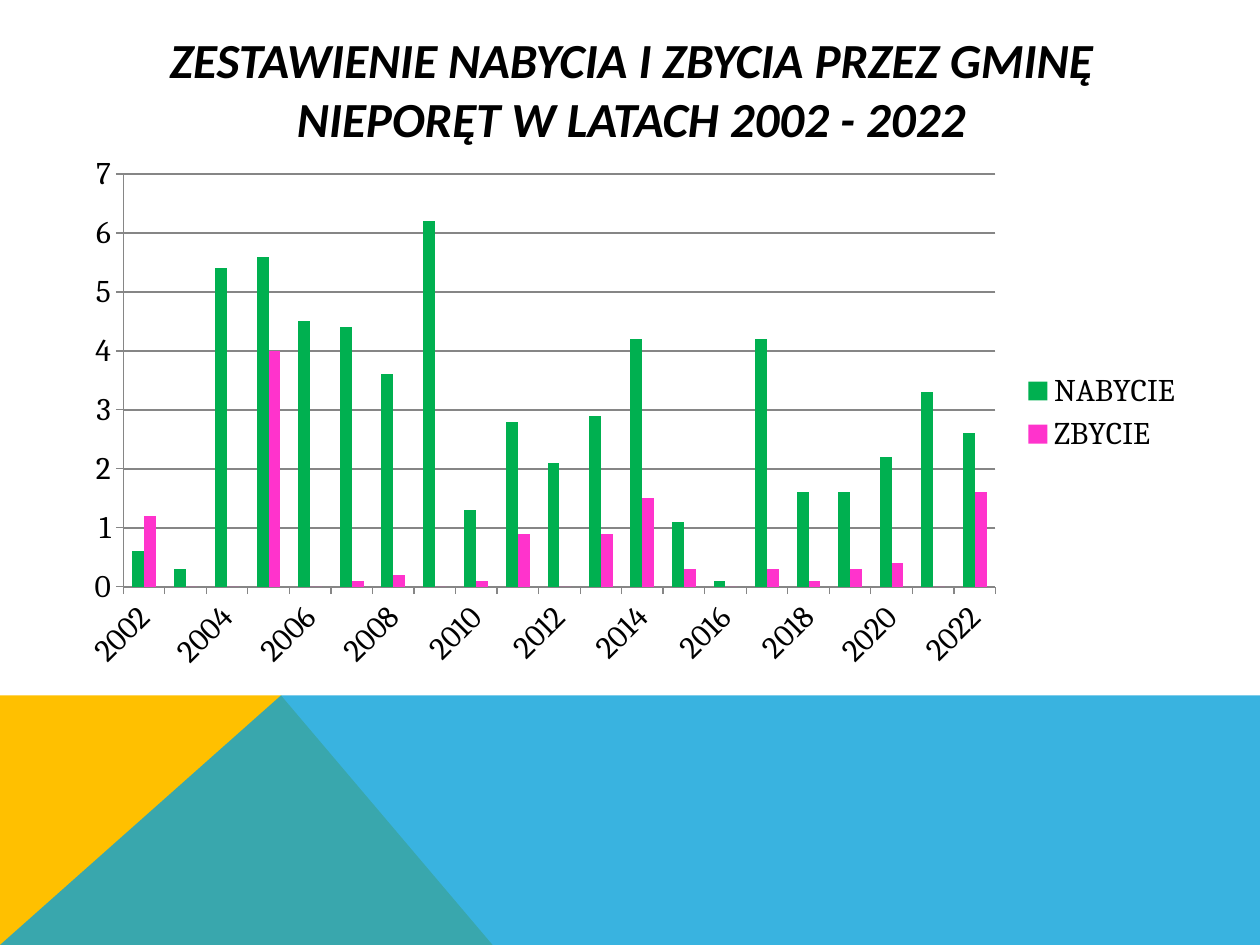
from dataclasses import dataclass

from lxml import etree
from pptx import Presentation
from pptx import util as u
from pptx.chart import data as chart_data
from pptx.dml import color as dml
from pptx.enum import chart as charts, text
from pptx.oxml import ns

Pt = u.Pt


@dataclass(frozen=True)
class Theme:
    """Colours, fonts and type sizes of the slide."""
    ink: str = "000000"
    grid: str = "868686"
    gold: str = "FFC000"
    blue: str = "08A1D9"
    bought: str = "00B050"
    sold: str = "FF33CC"
    title_font: str = "Calibri"
    chart_font: str = "Cambria"
    title_size: int = 28
    chart_size: int = 18


THEME = Theme()
WIDTH, HEIGHT = 720, 540
BAND_TOP, PEAK = 397.4, 160.6
TITLE = "ZESTAWIENIE NABYCIA I ZBYCIA PRZEZ GMINĘ NIEPORĘT W LATACH 2002 - 2022"
YEARS = [str(year) for year in range(2002, 2023)]
SERIES = [
    ("NABYCIE", THEME.bought,
     [0.6, 0.3, 5.4, 5.6, 4.5, 4.4, 3.6, 6.2, 1.3, 2.8, 2.1,
      2.9, 4.2, 1.1, 0.1, 4.2, 1.6, 1.6, 2.2, 3.3, 2.6]),
    ("ZBYCIE", THEME.sold,
     [1.2, 0, 0, 4, 0, 0.1, 0.2, 0, 0.1, 0.9, 0,
      0.9, 1.5, 0.3, 0, 0.3, 0.1, 0.3, 0.4, 0, 1.6]),
]


def paint(fill, colour):
    """Give a fill one solid colour."""
    fill.solid()
    fill.fore_color.rgb = dml.RGBColor.from_string(colour)


def style_font(font, name, size, bold=False, italic=False):
    """Set face, size, weight and ink colour of a font."""
    font.name, font.size = name, Pt(size)
    font.bold, font.italic = bold, italic
    font.color.rgb = dml.RGBColor.from_string(THEME.ink)


def add_polygon(slide, points, colour, opacity=100):
    """Draw a closed, borderless polygon through points."""
    start, *others = [(Pt(x), Pt(y)) for x, y in points]
    builder = slide.shapes.build_freeform(*start)
    builder.add_line_segments(others, close=True)
    shape = builder.convert_to_shape()
    shape.shadow.inherit = False
    paint(shape.fill, colour)
    shape.line.fill.background()
    if opacity < 100:
        solid = shape.fill._xPr.find(ns.qn("a:solidFill"))
        etree.SubElement(solid[0], ns.qn("a:alpha"), val=str(opacity * 1000))


def add_title(slide, wording, left, top, width, height):
    """Add the centred bold italic heading."""
    box = slide.shapes.add_textbox(Pt(left), Pt(top), Pt(width), Pt(height))
    frame = box.text_frame
    frame.word_wrap = True
    frame.vertical_anchor = text.MSO_ANCHOR.MIDDLE
    frame.text = wording
    paragraph = frame.paragraphs[0]
    paragraph.alignment = text.PP_ALIGN.CENTER
    style_font(paragraph.runs[0].font, THEME.title_font, THEME.title_size, True, True)


def style_line(line, width):
    """Give a chart line the grid colour and a width."""
    line.color.rgb = dml.RGBColor.from_string(THEME.grid)
    line.width = Pt(width)


def style_axes(chart):
    """Format both axes, the gridlines and the slanted years."""
    for axis in (chart.category_axis, chart.value_axis):
        axis.major_tick_mark = charts.XL_TICK_MARK.OUTSIDE
        axis.minor_tick_mark = charts.XL_TICK_MARK.NONE
        style_line(axis.format.line, 0.75)
        style_font(axis.tick_labels.font, THEME.chart_font, THEME.chart_size)
    values = chart.value_axis
    values.minimum_scale, values.maximum_scale, values.major_unit = 0, 7, 1
    values.tick_labels.number_format = "0"
    values.tick_labels.number_format_is_linked = False
    values.has_major_gridlines = True
    style_line(values.major_gridlines.format.line, 1)
    body = chart.category_axis._element.find(".//" + ns.qn("a:bodyPr"))
    body.set("rot", "-2700000")


def add_column_chart(slide, left, top, width, height):
    """Add the clustered columns with a legend on the right."""
    content = chart_data.CategoryChartData()
    content.categories = YEARS
    for name, _, values in SERIES:
        content.add_series(name, values)
    chart = slide.shapes.add_chart(
        charts.XL_CHART_TYPE.COLUMN_CLUSTERED,
        Pt(left), Pt(top), Pt(width), Pt(height), content).chart
    chart.has_title = False
    style_font(chart.font, THEME.chart_font, THEME.chart_size)
    chart.has_legend = True
    chart.legend.position = charts.XL_LEGEND_POSITION.RIGHT
    chart.legend.include_in_layout = False
    plot = chart.plots[0]
    plot.gap_width, plot.overlap = 150, 0
    plot.vary_by_categories = False
    for series, (_, colour, _) in zip(plot.series, SERIES):
        paint(series.format.fill, colour)
        series.invert_if_negative = False
    style_axes(chart)


def main():
    """Build and save the slide."""
    presentation = Presentation()
    presentation.slide_width, presentation.slide_height = Pt(WIDTH), Pt(HEIGHT)
    slide = presentation.slides.add_slide(presentation.slide_layouts[6])
    add_polygon(slide, [(0, HEIGHT), (0, BAND_TOP), (PEAK, BAND_TOP),
                        (281.5, HEIGHT)], THEME.gold)
    add_polygon(slide, [(0, HEIGHT), (PEAK, BAND_TOP), (WIDTH, BAND_TOP),
                        (WIDTH, HEIGHT)], THEME.blue, opacity=80)
    add_title(slide, TITLE, 64.8, 28.8, 591.8, 43.2)
    add_column_chart(slide, 36.7, 82.8, 646.6, 306)
    presentation.save("out.pptx")


if __name__ == "__main__":
    main()
